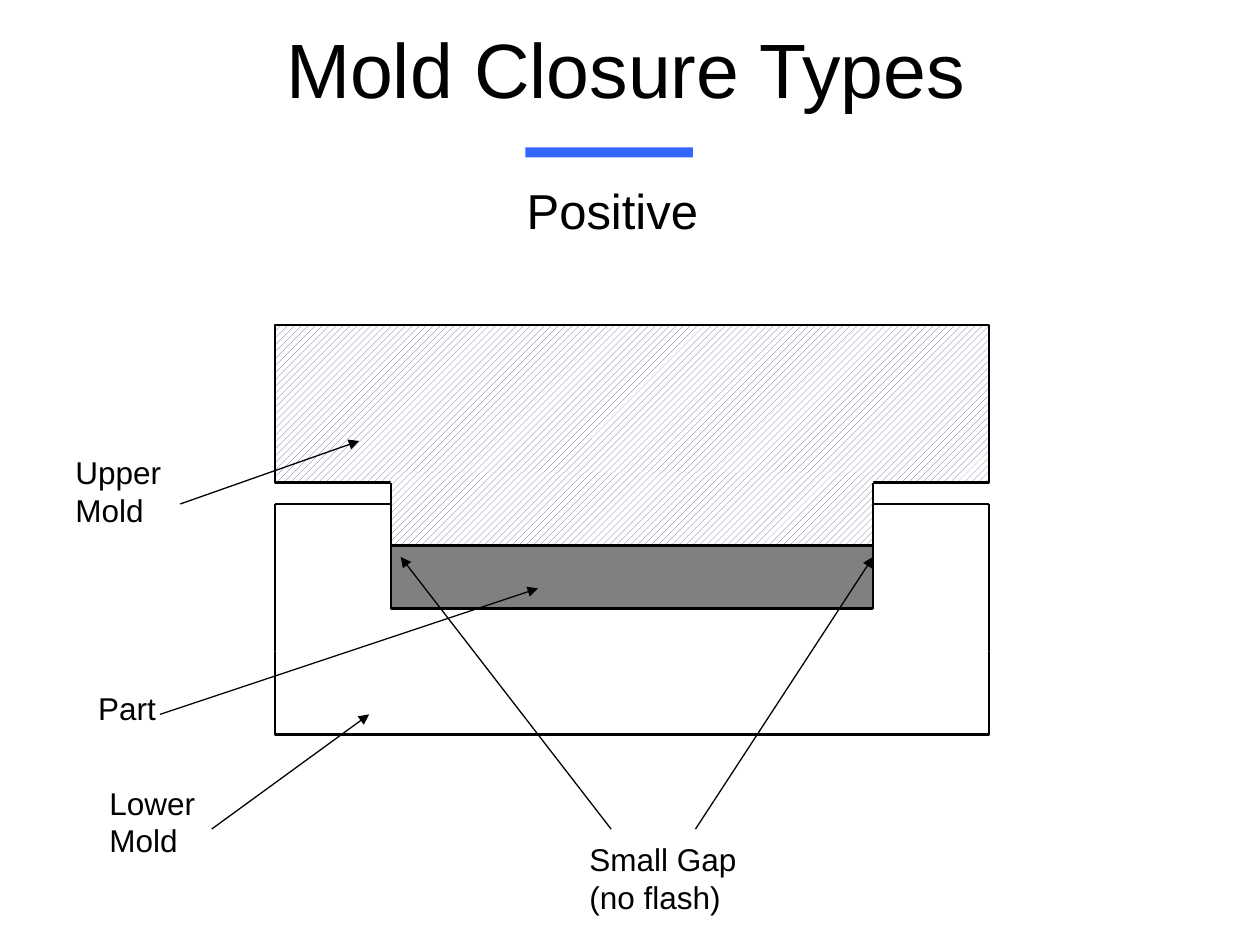
"""Build the slide on positive mold closure."""
from lxml import etree
from pptx import Presentation
from pptx.dml.color import RGBColor
from pptx.enum.dml import MSO_PATTERN
from pptx.enum.shapes import MSO_CONNECTOR, MSO_SHAPE
from pptx.enum.text import MSO_ANCHOR, MSO_AUTO_SIZE, PP_ALIGN
from pptx.oxml.ns import qn
from pptx.util import Inches, Pt

HATCH = MSO_PATTERN.WIDE_UPWARD_DIAGONAL
STRAIGHT = MSO_CONNECTOR.STRAIGHT
RECTANGLE = MSO_SHAPE.RECTANGLE
MIDDLE, TOP = MSO_ANCHOR.MIDDLE, MSO_ANCHOR.TOP
FIT_SHAPE, NO_FIT = MSO_AUTO_SIZE.SHAPE_TO_FIT_TEXT, MSO_AUTO_SIZE.NONE
LEFT = PP_ALIGN.LEFT

FONT = "Arial"
COLORS = {"ink": "000000", "paper": "FFFFFF", "part": "808080",
          "hatch": "666699", "accent": "3366FF"}
COLS = {"outer_left": 2.18, "inner_left": 3.1, "inner_right": 6.93, "outer_right": 7.85}
ROWS = {"upper_top": 2.58, "plug_top": 3.75, "upper_bottom": 3.83, "lower_top": 4,
        "plug_bottom": 4.33, "cavity_bottom": 4.83, "wall_bottom": 5.17, "lower_bottom": 5.83}
OUTLINE = 1.25
POINTER = 0.75

LABELS = [
    ("Part", 0.68, 5.42, 0.66, 0.4),
    ("Upper\nMold", 0.5, 3.55, 0.95, 0.7),
    ("Lower\nMold", 0.77, 6.17, 0.88, 0.7),
    ("Small Gap\n(no flash)", 4.58, 6.62, 1.37, 0.7),
]
POINTERS = [
    ((4.85, 6.58), (3.18, 4.42)),
    ((5.52, 6.58), (6.93, 4.42)),
    ((1.43, 4), (2.85, 3.5)),
    ((1.27, 5.67), (4.27, 4.67)),
    ((1.68, 6.58), (2.93, 5.67)),
]


def color(name):
    """Return the named colour."""
    return RGBColor.from_string(COLORS[name])


def add_block(shapes, left, top, right, bottom, fill, outlined=False):
    """Draw a rectangle between four edges, hatched or plain."""
    block = shapes.add_shape(RECTANGLE, Inches(left), Inches(top),
                             Inches(right - left), Inches(bottom - top))
    block.shadow.inherit = False
    if fill == "hatch":
        block.fill.patterned()
        block.fill.pattern = HATCH
        block.fill.fore_color.rgb = color("hatch")
        block.fill.back_color.rgb = color("paper")
    else:
        block.fill.solid()
        block.fill.fore_color.rgb = color(fill)
    if outlined:
        block.line.color.rgb = color("ink")
        block.line.width = Pt(OUTLINE)
    else:
        block.line.fill.background()


def add_line(shapes, start, end, width, arrow=False):
    """Draw a straight black line, with an arrowhead at its end if asked."""
    line = shapes.add_connector(STRAIGHT, *map(Inches, (*start, *end)))
    line.line.color.rgb = color("ink")
    line.line.width = Pt(width)
    if arrow:
        etree.SubElement(line.line._get_or_add_ln(), qn("a:tailEnd"), type="triangle")
    etree.SubElement(line._element.spPr, qn("a:effectLst"))


def format_text(frame, size):
    """Give every run of a text frame the slide's font."""
    for para in frame.paragraphs:
        para.alignment = LEFT
        for span in para.runs:
            span.font.name = FONT
            span.font.size = Pt(size)
            span.font.color.rgb = color("ink")


def add_label(shapes, text, left, top, width, height):
    """Add an unwrapped label."""
    box = shapes.add_textbox(*map(Inches, (left, top, width, height)))
    box.text_frame.word_wrap = False
    box.text_frame.auto_size = FIT_SHAPE
    box.text_frame.text = text
    format_text(box.text_frame, 18)


def fill_placeholder(holder, text, place, size, anchor):
    """Move a placeholder and set its text."""
    holder.left, holder.top, holder.width, holder.height = map(Inches, place)
    frame = holder.text_frame
    frame.text = text
    frame.auto_size = NO_FIT
    frame.vertical_anchor = anchor
    format_text(frame, size)


def indent_without_bullet(para, margin, indent):
    """Set a hanging indent and remove the bullet."""
    para.space_before = Pt(0)
    props = para._p.get_or_add_pPr()
    props.set("marL", str(Inches(margin)))
    props.set("indent", str(Inches(indent)))
    etree.SubElement(props, qn("a:buNone"))


def add_mold(page):
    """Draw the cross-section of the closed mold as one group."""
    shapes = page.shapes.add_group_shape().shapes
    outer_left, inner_left, inner_right, outer_right = COLS.values()
    (upper_top, plug_top, upper_bottom, lower_top,
     plug_bottom, cavity_bottom, wall_bottom, lower_bottom) = ROWS.values()
    sides = ((inner_left, outer_left), (inner_right, outer_right))

    add_block(shapes, 2.77, lower_top, 7.27, 5.25, "part")
    add_block(shapes, outer_left, upper_top, outer_right, upper_bottom, "hatch", True)
    add_block(shapes, inner_left, plug_top, inner_right, plug_bottom, "hatch")
    for inner, _ in sides:
        add_line(shapes, (inner, upper_bottom), (inner, plug_bottom), OUTLINE)
    add_line(shapes, (inner_left, plug_bottom), (inner_right, plug_bottom), OUTLINE)
    add_block(shapes, outer_left, cavity_bottom, outer_right, lower_bottom, "paper", True)
    for inner, outer in sides:
        add_block(shapes, min(inner, outer), lower_top, max(inner, outer), wall_bottom, "paper")
        add_line(shapes, (inner, lower_top), (inner, cavity_bottom), OUTLINE)
        add_line(shapes, (inner, lower_top), (outer, lower_top), OUTLINE)
        add_line(shapes, (outer, lower_top), (outer, wall_bottom), OUTLINE)


def main():
    """Build and save the deck."""
    deck = Presentation()
    deck.slide_width, deck.slide_height = Inches(10), Inches(7.5)
    page = deck.slides.add_slide(deck.slide_layouts[1])

    add_mold(page)
    for label in LABELS:
        add_label(page.shapes, *label)
    for start, end in POINTERS:
        add_line(page.shapes, start, end, POINTER, arrow=True)

    title, body = page.placeholders
    fill_placeholder(title, "Mold Closure Types", (2.17, 0, 7.25, 1.08), 44, MIDDLE)
    fill_placeholder(body, "Positive", (3.58, 1.33, 2.75, 0.67), 28, TOP)
    body.text_frame.margin_top = Inches(0.1)
    indent_without_bullet(body.text_frame.paragraphs[0], 0.81, -0.31)
    add_block(page.shapes, 4.17, 1.17, 5.5, 1.25, "accent")
    deck.save("out.pptx")


if __name__ == "__main__":
    main()
